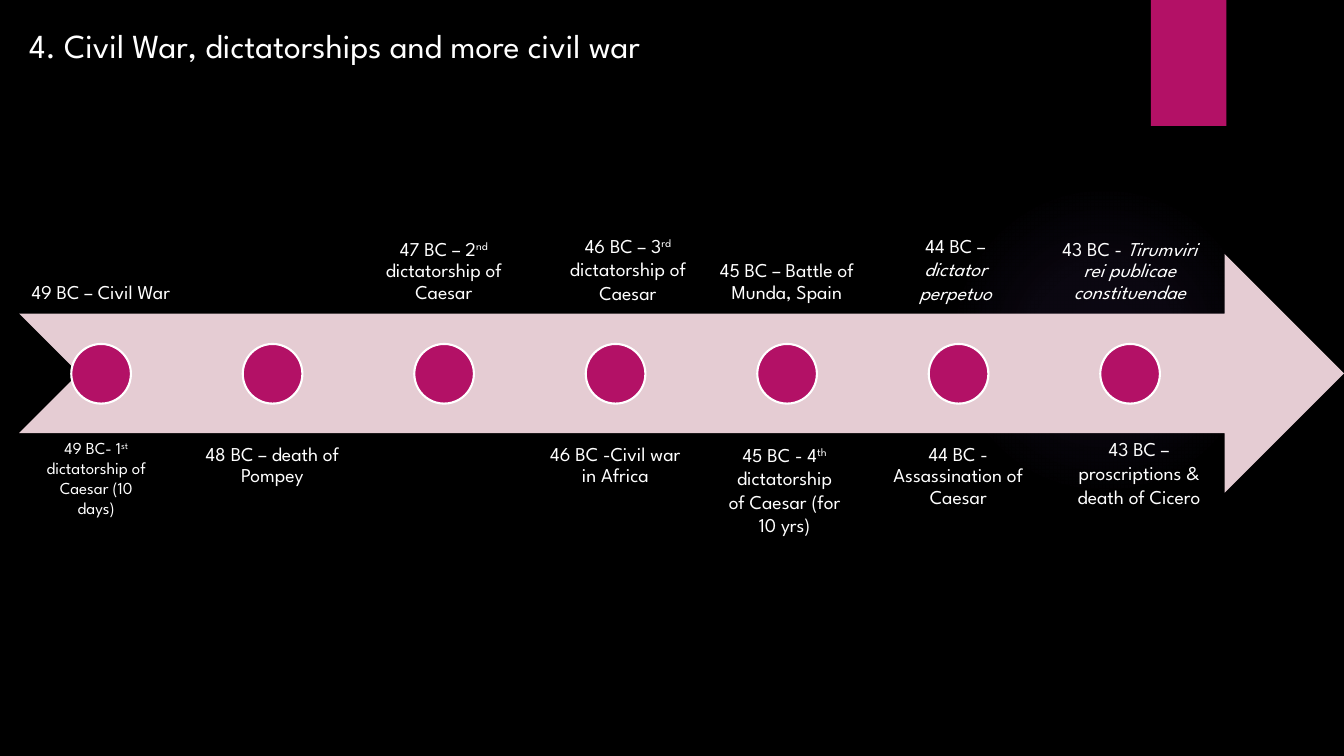
"""Build a timeline slide of the Roman civil wars and dictatorships."""
from dataclasses import dataclass

from pptx import Presentation
from pptx.dml.color import RGBColor
from pptx.enum import shapes, text
from pptx.oxml import parse_xml
from pptx.oxml.ns import nsdecls
from pptx.util import Pt


@dataclass(frozen=True)
class Theme:
    """Colours and type sizes of the slide."""
    font: str = "League Spartan"
    night: RGBColor = RGBColor(0x00, 0x00, 0x00)
    white: RGBColor = RGBColor(0xFF, 0xFF, 0xFF)
    magenta: RGBColor = RGBColor(0xB3, 0x11, 0x66)
    blush: RGBColor = RGBColor(0xE5, 0xCC, 0xD3)
    violet: RGBColor = RGBColor(0x9B, 0x6B, 0xF2)
    title: float = 24
    event: float = 14
    small: float = 12


@dataclass(frozen=True)
class Box:
    """A rectangle in points."""
    left: float
    top: float
    width: float
    height: float

    def lengths(self) -> tuple:
        """Return the four sides as lengths."""
        return Pt(self.left), Pt(self.top), Pt(self.width), Pt(self.height)


@dataclass(frozen=True)
class Piece:
    """A stretch of text in one style."""
    words: str
    italic: bool = False
    raised: bool = False


@dataclass(frozen=True)
class Milestone:
    """An event label beside a dot on the arrow."""
    pieces: tuple


@dataclass(frozen=True)
class Note:
    """A freely placed text."""
    box: Box
    pieces: tuple
    size: float
    align: text.PP_ALIGN = text.PP_ALIGN.CENTER


THEME = Theme()
PITCH = 122.5
LABEL_LEFT, LABEL_WIDTH, LABEL_HEIGHT = 13.7, 116.8, 170.6
LABEL_TOPS = (54, 309.9)
LABEL_INSET = 7.84
DOT_LEFT, DOT_TOP, DOT_SIZE = 50.9, 245.7, 42.6
ARROW = Box(13.7, 181.4, 946.3, 170.6)
GLOW = Box(677.5, 131.8, 221.8, 221.8)
BANNER = Box(822, 0, 54, 90)
GLOW_STOPS = ((0, 7), (36, 6), (69, 0))

MILESTONES = (
    Milestone((Piece("49 BC – Civil War"),)),
    Milestone((Piece("48 BC – death of Pompey"),)),
    Milestone((Piece("47 BC – 2"), Piece("nd", raised=True), Piece(" dictatorship of Caesar"))),
    Milestone((Piece("46 BC -Civil war in Africa"),)),
    Milestone((Piece("45 BC – Battle of Munda, Spain"),)),
    Milestone((Piece("44 BC - Assassination of Caesar"),)),
    Milestone((Piece("43 BC - "), Piece("Tirumviri rei publicae constituendae", italic=True))),
)

NOTES = (
    Note(Box(398.2, 163.4, 100.8, 74.9),
         (Piece("46 BC – 3"), Piece("rd", raised=True), Piece(" dictatorship of Caesar")),
         THEME.event),
    Note(Box(25.9, 308.9, 85.7, 87.1),
         (Piece("49 BC- 1"), Piece("st ", raised=True), Piece("dictatorship of Caesar (10 days)")),
         THEME.small),
    Note(Box(512.6, 312.5, 95.8, 92.2),
         (Piece("45 BC - 4"), Piece("th ", raised=True), Piece("dictatorship of Caesar (for 10 yrs)")),
         THEME.event),
    Note(Box(639.4, 163.4, 86.4, 58.3),
         (Piece("44 BC – "), Piece("dictator perpetuo", italic=True)), THEME.event),
    Note(Box(760.3, 308.9, 106.6, 74.9),
         (Piece("43 BC – proscriptions & death of Cicero"),), THEME.event),
    Note(Box(13.7, 14.4, 541.4, 36),
         (Piece("4. Civil War, dictatorships and more civil war"),),
         THEME.title, text.PP_ALIGN.LEFT),
)


def add_solid(slide, kind: shapes.MSO_SHAPE, box: Box, colour: RGBColor):
    """Add a flat preset shape without an outline."""
    solid = slide.shapes.add_shape(kind, *box.lengths())
    solid.shadow.inherit = False
    solid.fill.solid()
    solid.fill.fore_color.rgb = colour
    solid.line.fill.background()
    return solid


def add_glow(slide) -> None:
    """Add the faint radial glow."""
    glow = add_solid(slide, shapes.MSO_SHAPE.OVAL, GLOW, THEME.violet)
    stops = "".join(
        f'<a:gs pos="{place * 1000}"><a:srgbClr val="{THEME.violet}">'
        f'<a:alpha val="{opacity * 1000}"/></a:srgbClr></a:gs>'
        for place, opacity in GLOW_STOPS)
    gradient = parse_xml(
        f'<a:gradFill {nsdecls("a")}><a:gsLst>{stops}</a:gsLst><a:path path="circle">'
        '<a:fillToRect l="50000" t="50000" r="50000" b="50000"/></a:path></a:gradFill>')
    properties = glow._element.spPr
    properties.replace(properties.find("{*}solidFill"), gradient)


def add_text(slide, note: Note):
    """Add a wrapped text box and return its frame."""
    frame = slide.shapes.add_textbox(*note.box.lengths()).text_frame
    frame.word_wrap = True
    paragraph = frame.paragraphs[0]
    paragraph.alignment = note.align
    paragraph.font.name = THEME.font
    paragraph.font.size = Pt(note.size)
    paragraph.font.color.rgb = THEME.white
    for piece in note.pieces:
        run = paragraph.add_run()
        run.text = piece.words
        if piece.italic:
            run.font.italic = True
        if piece.raised:
            run.font._element.set("baseline", "30000")
    return frame


def add_milestone(slide, index: int, milestone: Milestone) -> None:
    """Add a label, alternating above and below the arrow, and its dot."""
    below = index % 2
    shift = PITCH * index
    box = Box(LABEL_LEFT + shift, LABEL_TOPS[below], LABEL_WIDTH, LABEL_HEIGHT)
    frame = add_text(slide, Note(box, milestone.pieces, THEME.event))
    frame.margin_left = frame.margin_right = Pt(LABEL_INSET)
    frame.margin_top = frame.margin_bottom = Pt(LABEL_INSET)
    frame.vertical_anchor = text.MSO_ANCHOR.TOP if below else text.MSO_ANCHOR.BOTTOM
    frame.paragraphs[0].line_spacing = 0.9
    dot = add_solid(slide, shapes.MSO_SHAPE.OVAL,
                    Box(DOT_LEFT + shift, DOT_TOP, DOT_SIZE, DOT_SIZE), THEME.magenta)
    dot.line.color.rgb = THEME.white
    dot.line.width = Pt(1.5)


def main() -> None:
    """Build and save the slide."""
    deck = Presentation()
    deck.slide_width, deck.slide_height = Pt(960), Pt(540)
    slide = deck.slides.add_slide(deck.slide_layouts[6])
    slide.background.fill.solid()
    slide.background.fill.fore_color.rgb = THEME.night
    add_glow(slide)
    add_solid(slide, shapes.MSO_SHAPE.RECTANGLE, BANNER, THEME.magenta)
    add_solid(slide, shapes.MSO_SHAPE.NOTCHED_RIGHT_ARROW, ARROW, THEME.blush)
    for index, milestone in enumerate(MILESTONES):
        add_milestone(slide, index, milestone)
    for note in NOTES:
        add_text(slide, note).auto_size = text.MSO_AUTO_SIZE.SHAPE_TO_FIT_TEXT
    deck.save("out.pptx")


if __name__ == "__main__":
    main()
